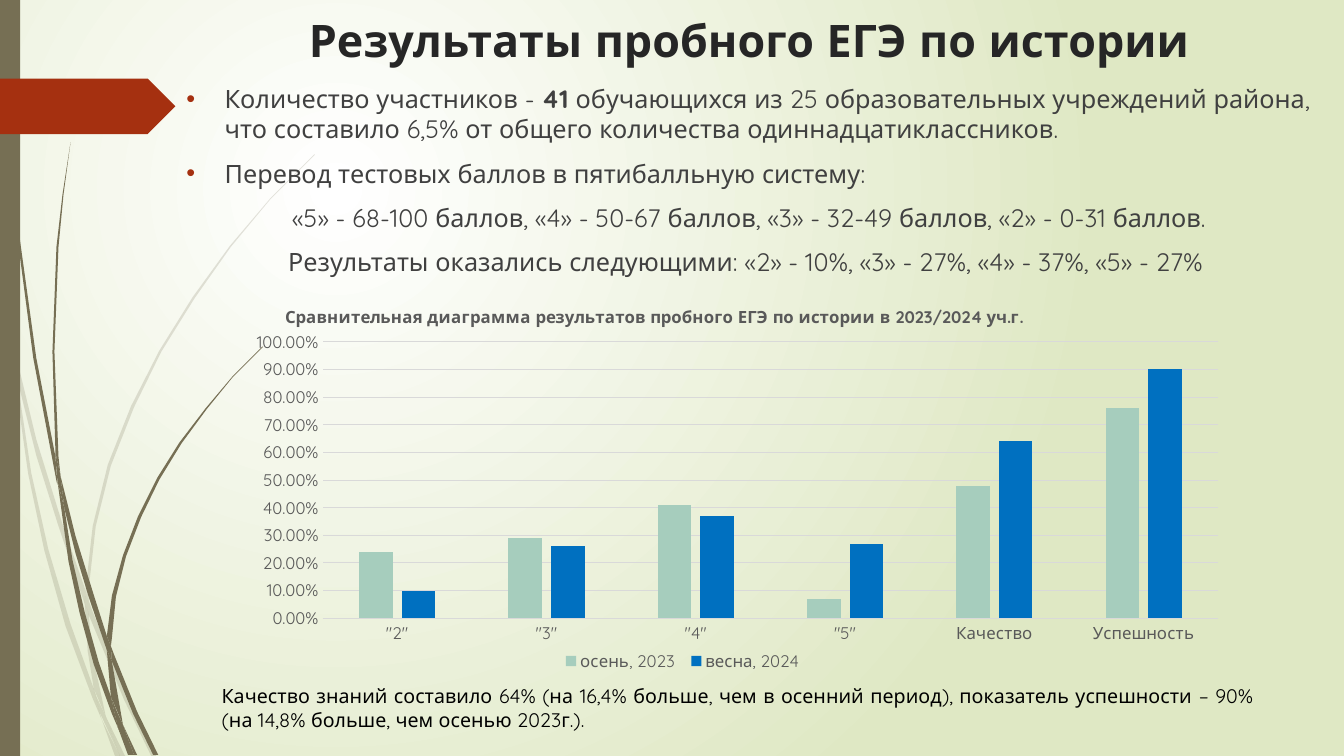
from lxml import etree
from pptx import Presentation
from pptx.chart.data import CategoryChartData
from pptx.dml.color import RGBColor
from pptx.enum import chart as ch, shapes, text
from pptx.oxml import parse_xml
from pptx.oxml.ns import nsdecls, qn
from pptx.util import Inches, Pt

FONT = "Quicksand"
COLORS = {
    "light": "FFFFFF", "green": "DFE8C4", "stem": "766F54", "accent": "A53010",
    "title": "262626", "body": "404040", "note": "000000",
    "label": "595959", "grid": "D9D9D9", "autumn": "A6CDBD", "spring": "0070C0",
}
# Outlines of the grass pieces, as corner points in inches
FAINT_GRASS = [
    [(0.11, 3.5), (0.09, 3.22), (0, 2.82), (0, 2.99), (0.1, 3.44)],
    [(0.58, 5.22), (0.84, 5.99), (0.85, 5.86), (0.62, 5.2), (0.36, 4.36), (0.14, 3.45),
     (0.17, 3.76), (0.36, 4.52)],
    [(0.92, 6.07), (0.88, 5.96), (0.88, 6.1), (1.23, 6.94), (1.5, 7.5), (1.55, 7.5), (1.27, 6.92)],
    [(1.19, 7.5), (1.24, 7.5), (1.05, 7.11)],
    [(0.93, 6.83), (0.7, 6.19), (0.48, 5.45), (0.31, 4.69), (0.17, 3.76), (0.11, 3.5), (0.28, 4.7),
     (0.44, 5.46), (0.65, 6.21), (0.92, 6.93), (1.01, 7.14), (0.99, 7.07)],
    [(0.84, 5.99), (0.87, 6.46), (0.93, 6.83), (1.05, 7.11), (0.91, 6.46), (0.88, 6.08)],
    [(0.88, 5.84), (0.95, 5.22), (1.1, 4.62), (1.33, 4.04), (1.6, 3.49), (1.93, 2.96), (2.29, 2.45),
     (2.68, 1.98), (3.12, 1.54), (3.12, 1.53), (2.68, 1.97), (2.28, 2.44), (1.91, 2.95),
     (1.58, 3.48), (1.3, 4.03), (1.07, 4.61), (0.92, 5.22), (0.85, 5.84), (0.88, 5.96)],
    [(1.01, 7.14), (1.14, 7.5), (1.19, 7.5)],
    [(0.88, 6.08), (0.88, 5.96), (0.85, 5.86), (0.84, 5.99)],
    [(0.96, 6.92), (0.93, 6.83), (0.99, 7.07), (1.19, 7.5), (1.05, 7.11)],
]
DARK_GRASS = [
    [(0.07, 1.1), (0.17, 2.33), (0.33, 3.55), (0.56, 4.77), (0.57, 4.81), (0.55, 4.53),
     (0.36, 3.55), (0.19, 2.32), (0.08, 1.09), (0.05, 0.48), (0.04, 0), (0.03, 0), (0.04, 0.48)],
    [(0.88, 5.92), (1.06, 6.45), (1.06, 6.31), (0.93, 5.9), (0.75, 5.32), (0.6, 4.72),
     (0.64, 5.05), (0.75, 5.49)],
    [(1.13, 6.49), (1.1, 6.41), (1.11, 6.56), (1.32, 7.08), (1.52, 7.49), (1.57, 7.49), (1.36, 7.06)],
    [(1.1, 6.91), (0.98, 6.57), (0.84, 6.07), (0.72, 5.56), (0.64, 5.05), (0.57, 4.77),
     (0.68, 5.57), (0.79, 6.08), (0.93, 6.59), (1.11, 7.08), (1.17, 7.22), (1.16, 7.17)],
    [(0.6, 4.72), (0.58, 4.53), (0.54, 3.49), (0.58, 2.45), (0.63, 1.93), (0.7, 1.41),
     (0.62, 1.93), (0.56, 2.45), (0.52, 3.49), (0.55, 4.49)],
    [(1.33, 7.49), (1.36, 7.49), (1.22, 7.19)],
    [(0.57, 4.77), (0.64, 5.05), (0.6, 4.72), (0.55, 4.49), (0.55, 4.53)],
    [(1.11, 6.33), (1.15, 5.92), (1.25, 5.52), (1.4, 5.13), (1.58, 4.76), (1.8, 4.4), (2.05, 4.06),
     (2.31, 3.74), (2.61, 3.44), (2.6, 3.44), (2.31, 3.73), (2.04, 4.05), (1.78, 4.39),
     (1.56, 4.74), (1.37, 5.12), (1.22, 5.51), (1.11, 5.91), (1.06, 6.31), (1.1, 6.41)],
    [(1.17, 7.22), (1.27, 7.49), (1.31, 7.49)],
    [(1.06, 6.45), (1.1, 6.91), (1.22, 7.19), (1.11, 6.56)],
    [(1.06, 6.45), (1.11, 6.56), (1.1, 6.41), (1.06, 6.31)],
    [(1.16, 7.06), (1.1, 6.91), (1.17, 7.22), (1.3, 7.49), (1.33, 7.49), (1.22, 7.19)],
]
SCORES = {
    "осень, 2023": ("autumn", (0.24, 0.29, 0.41, 0.07, 0.48, 0.76)),
    "весна, 2024": ("spring", (0.1, 0.26, 0.37, 0.27, 0.64, 0.9)),
}


def rgb(name):
    return RGBColor.from_string(COLORS[name])


def paint(shape, color):
    shape.shadow.inherit = False
    shape.fill.solid()
    shape.fill.fore_color.rgb = rgb(color)
    shape.line.fill.background()


def set_background(slide):
    fill = slide.background.fill
    fill.gradient()
    for stop, color in zip(fill.gradient_stops, ("light", "green")):
        stop.color.rgb = rgb(color)
    linear = slide.background._cSld.find(".//" + qn("a:lin"))
    linear.getparent().replace(linear, parse_xml(
        f'<a:path {nsdecls("a")} path="circle">'
        '<a:fillToRect l="50000" t="50000" r="100000" b="100000"/></a:path>'))


def add_grass(slide, outline, opacity=100):
    corners = [(Inches(x), Inches(y)) for x, y in outline]
    builder = slide.shapes.build_freeform(*corners[0])
    builder.add_line_segments(corners[1:], close=True)
    grass = builder.convert_to_shape()
    paint(grass, "stem")
    if opacity < 100:
        color = grass.fill._xPr.find(".//" + qn("a:srgbClr"))
        etree.SubElement(color, qn("a:alpha"), val=str(opacity * 1000))


def add_block(slide, kind, box, color):
    paint(slide.shapes.add_shape(kind, *map(Inches, box)), color)


def style(font, size, color, bold=False):
    font.name, font.size, font.bold = FONT, Pt(size), bold
    font.color.rgb = rgb(color)


def add_text(slide, box, paragraphs, size, color, align, bold=False, gap=0):
    """Add a text box and return its paragraphs."""
    frame = slide.shapes.add_textbox(*map(Inches, box)).text_frame
    frame.word_wrap = True
    for i, words in enumerate(paragraphs):
        paragraph = frame.add_paragraph() if i else frame.paragraphs[0]
        paragraph.text = words
        paragraph.alignment = align
        if i and gap:
            paragraph.space_before = Pt(gap)
        style(paragraph.font, size, color, bold)
    return frame.paragraphs


def add_bullet(paragraph):
    props = paragraph._p.get_or_add_pPr()
    props.set("marL", str(Inches(0.38)))
    props.set("indent", str(-Inches(0.38)))
    marks = (f'<a:buClr {nsdecls("a")}><a:srgbClr val="{COLORS["accent"]}"/></a:buClr>',
             f'<a:buFont {nsdecls("a")} typeface="Arial"/>',
             f'<a:buChar {nsdecls("a")} char="•"/>')
    for mark in marks:
        props.find(qn("a:defRPr")).addprevious(parse_xml(mark))


def place(parent, after=None, inner=False, **places):
    """Give a chart part a manual layout, in fractions of the chart."""
    target = '<c:layoutTarget val="inner"/>' if inner else ""
    modes = "".join(f'<c:{key}Mode val="edge"/>' for key in "xy")
    values = "".join(f'<c:{key} val="{value}"/>' for key, value in places.items())
    layout = parse_xml(f'<c:layout {nsdecls("c")}><c:manualLayout>{target}{modes}{values}'
                       '</c:manualLayout></c:layout>')
    for old in parent.findall(qn("c:layout")):
        parent.remove(old)
    if after is None:
        parent.insert(0, layout)
    else:
        parent.find(qn(after)).addnext(layout)


def add_results_chart(slide, box):
    data = CategoryChartData(number_format="0.00%")
    data.categories = ['"2"', '"3"', '"4"', '"5"', "Качество", "Успешность"]
    for name, (_, values) in SCORES.items():
        data.add_series(name, values)
    chart = slide.shapes.add_chart(
        ch.XL_CHART_TYPE.COLUMN_CLUSTERED, *map(Inches, box), data).chart
    style(chart.font, 12, "label")

    heading = chart.chart_title.text_frame.paragraphs[0]
    heading.text = "Сравнительная диаграмма результатов пробного ЕГЭ по истории в 2023/2024 уч.г."
    style(heading.font, 12, "label", bold=True)
    place(chart.chart_title._element, after="c:tx", x=0.174, y=0.202)
    chart.chart_title.include_in_layout = False
    place(chart._chartSpace.find(".//" + qn("c:plotArea")), inner=True,
          x=0.209, y=0.286, w=0.774, h=0.585)

    chart.has_legend = True
    chart.legend.position = ch.XL_LEGEND_POSITION.BOTTOM
    chart.legend.include_in_layout = False
    style(chart.legend.font, 12, "label")
    place(chart.legend._element, after="c:legendPos", x=0.41, y=0.94, w=0.22, h=0.05)

    plot = chart.plots[0]
    plot.gap_width, plot.overlap, plot.vary_by_categories = 219, -27, False
    for series, (color, _) in zip(plot.series, SCORES.values()):
        series.format.fill.solid()
        series.format.fill.fore_color.rgb = rgb(color)

    for axis in (chart.category_axis, chart.value_axis):
        axis.major_tick_mark = axis.minor_tick_mark = ch.XL_TICK_MARK.NONE
        style(axis.tick_labels.font, 12, "label")
    scale = chart.value_axis
    scale.minimum_scale, scale.maximum_scale, scale.major_unit = 0, 1, 0.1
    scale.tick_labels.number_format = "0.00%"
    scale.tick_labels.number_format_is_linked = False
    scale.format.line.fill.background()
    for line in (scale.major_gridlines.format.line, chart.category_axis.format.line):
        line.color.rgb = rgb("grid")
        line.width = Pt(0.75)


def main():
    deck = Presentation()
    deck.slide_width, deck.slide_height = Inches(13.33), Inches(7.5)
    slide = deck.slides.add_slide(deck.slide_layouts[6])
    set_background(slide)
    for pieces, opacity in ((FAINT_GRASS, 20), (DARK_GRASS, 100)):
        for outline in pieces:
            add_grass(slide, outline, opacity)
    add_block(slide, shapes.MSO_SHAPE.RECTANGLE, (0, 0, 0.2, 7.5), "stem")
    add_block(slide, shapes.MSO_SHAPE.PENTAGON, (0, 0.78, 1.74, 0.55), "accent")

    align = text.PP_ALIGN
    add_text(slide, (1.92, 0.08, 11.02, 1.4), ["Результаты пробного ЕГЭ по истории"],
             32, "title", align.CENTER, bold=True)
    facts = add_text(slide, (1.75, 0.78, 11.36, 4.13), [
        "Количество участников - ",
        "Перевод тестовых баллов в пятибалльную систему:",
        "«5» - 68-100 баллов, «4» - 50-67 баллов, «3» - 32-49 баллов, «2» - 0-31 баллов.",
        "Результаты оказались следующими: «2» - 10%, «3» - 27%, «4» - 37%, «5» - 27% ",
    ], 18, "body", align.CENTER, gap=10)
    for fact in facts[:2]:
        fact.alignment = align.LEFT
        add_bullet(fact)
    count = facts[0].add_run()
    count.text = "41 "
    count.font.bold = True
    facts[0].add_run().text = ("обучающихся из 25 образовательных учреждений района, что составило "
                               "6,5% от общего количества одиннадцатиклассников.")
    add_results_chart(slide, (0.8, 2.05, 11.48, 4.69))
    add_text(slide, (2.1, 6.74, 10.43, 0.57), [
        "Качество знаний составило 64% (на 16,4% больше, чем в осенний период), показатель "
        "успешности – 90% (на 14,8% больше, чем осенью 2023г.)."], 14, "note", align.JUSTIFY)
    deck.save("out.pptx")


if __name__ == "__main__":
    main()
